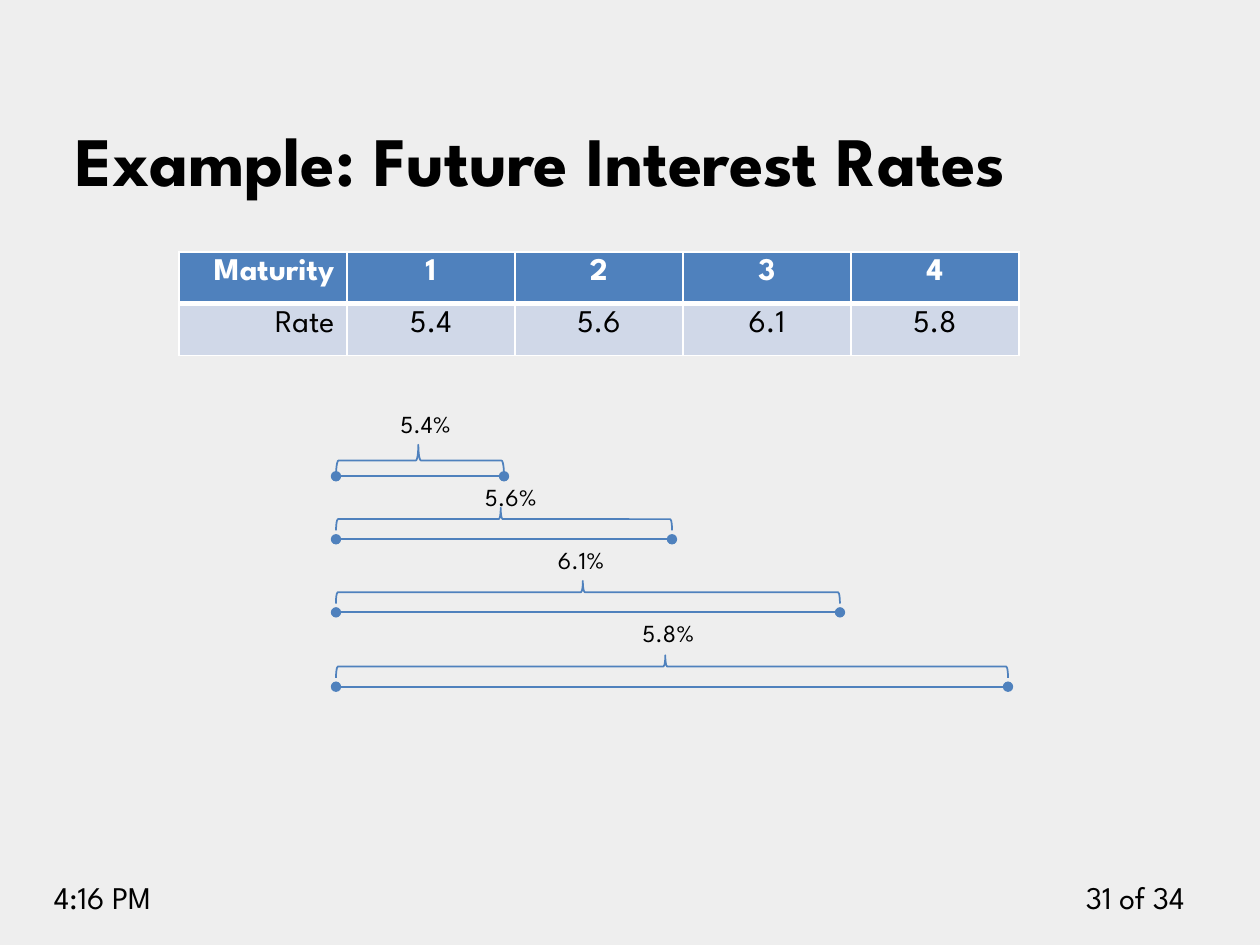
"""Build the slide on future interest rates: a rate table and a maturity timeline."""
from lxml.etree import SubElement
from pptx import Presentation
from pptx.dml.color import RGBColor
from pptx.enum.shapes import MSO_CONNECTOR, MSO_SHAPE
from pptx.enum.text import MSO_ANCHOR, MSO_AUTO_SIZE, PP_ALIGN
from pptx.oxml import parse_xml
from pptx.oxml.ns import nsdecls, qn
from pptx.util import Inches, Pt

COLORS = {"back": "EEEEEE", "ink": "000000", "accent": "4F81BD", "band": "D0D8E8", "white": "FFFFFF"}
FONT = "League Spartan"
WIDTH, HEIGHT = 10, 7.5
COLUMN = WIDTH * 2 / 15
TABLE_LEFT, TABLE_TOP, ROW = 1.42, 2, 0.41
TIMELINE_LEFT = 2 * COLUMN
RATES = ["5.4", "5.6", "6.1", "5.8"]
LINE_TOPS = [3.78, 4.28, 4.86, 5.45]
LABEL_TOPS = [3.2] + LINE_TOPS[:-1]
LABEL_LEFTS = [3.08, 3.75, 4.33, 5]
BRACES = [(3.53, 0.25)] + [(top - 0.25, 0.18) for top in LINE_TOPS[1:]]


def color(name):
    return RGBColor.from_string(COLORS[name])


def write(frame, text, size, align=PP_ALIGN.LEFT, ink="ink", bold=False):
    paragraph = frame.paragraphs[0]
    paragraph.text = text
    paragraph.alignment = align
    font = paragraph.runs[0].font
    for name, value in {"name": FONT, "size": Pt(size), "bold": bold}.items():
        setattr(font, name, value)
    font.color.rgb = color(ink)


def add_title(slide, text):
    title = slide.shapes.title
    place = {"left": 0.5, "top": 0.39, "width": 0.9 * WIDTH, "height": 1.25}
    for name, value in place.items():
        setattr(title, name, Inches(value))
    title.text_frame.auto_size = MSO_AUTO_SIZE.NONE
    title.text_frame.vertical_anchor = MSO_ANCHOR.BOTTOM
    write(title.text_frame, text, 39.6, bold=True)


def add_label(slide, text, place, size, align=PP_ALIGN.LEFT):
    frame = slide.shapes.add_textbox(*map(Inches, place)).text_frame
    frame.word_wrap = True
    write(frame, text, size, align)


def add_borders(cell, widths):
    properties = cell._tc.get_or_add_tcPr()
    for index, (side, width) in enumerate(widths.items()):
        border = parse_xml(
            f'<a:ln{side} {nsdecls("a")} w="{Pt(width)}"><a:solidFill>'
            f'<a:srgbClr val="{COLORS["white"]}"/></a:solidFill></a:ln{side}>')
        properties.insert(index, border)


def add_rate_table(slide):
    rows = [["Maturity", *map(str, range(1, len(RATES) + 1))], ["Rate", *RATES]]
    styles = [("accent", "white", True, {"L": 1, "R": 1, "T": 1, "B": 3}),
              ("band", "ink", False, {"L": 1, "R": 1, "T": 3, "B": 1})]
    count = len(rows[0])
    place = (TABLE_LEFT, TABLE_TOP, count * COLUMN, len(rows) * ROW)
    table = slide.shapes.add_table(len(rows), count, *map(Inches, place)).table
    for r, (texts, (fill, ink, bold, widths)) in enumerate(zip(rows, styles)):
        for c, text in enumerate(texts):
            cell = table.cell(r, c)
            cell.fill.solid()
            cell.fill.fore_color.rgb = color(fill)
            add_borders(cell, widths)
            align = PP_ALIGN.CENTER if c else PP_ALIGN.RIGHT
            write(cell.text_frame, text, 18, align, ink, bold)


def style_line(shape):
    shape.line.color.rgb = color("accent")
    shape.line.width = Pt(1)


def add_span(slide, length, top):
    ends = (TIMELINE_LEFT, top, TIMELINE_LEFT + length, top)
    span = slide.shapes.add_connector(MSO_CONNECTOR.STRAIGHT, *map(Inches, ends))
    style_line(span)
    outline = span.line._get_or_add_ln()
    for end in ("a:headEnd", "a:tailEnd"):
        SubElement(outline, qn(end), type="oval")
    SubElement(span._element.spPr, qn("a:effectLst"))


def add_brace(slide, length, top, depth):
    left = TIMELINE_LEFT + (length - depth) / 2
    place = (left, top + (depth - length) / 2, depth, length)
    brace = slide.shapes.add_shape(MSO_SHAPE.LEFT_BRACE, *map(Inches, place))
    brace.rotation = 270
    brace._element.spPr.xfrm.set("flipH", "1")
    brace.adjustments[0], brace.adjustments[1] = 0.08, 0.49
    brace.shadow.inherit = False
    brace.fill.background()
    style_line(brace)


def main():
    deck = Presentation()
    deck.slide_width, deck.slide_height = Inches(WIDTH), Inches(HEIGHT)
    slide = deck.slides.add_slide(deck.slide_layouts[5])
    slide.background.fill.solid()
    slide.background.fill.fore_color.rgb = color("back")
    add_label(slide, "31 of 34", (8.33, 6.92, 1.17, 0.4), 18, PP_ALIGN.RIGHT)
    add_label(slide, "4:16 PM", (0.33, 6.92, 1.58, 0.4), 18)
    add_title(slide, "Example: Future Interest Rates")
    add_rate_table(slide)
    timeline = zip(RATES, LINE_TOPS, BRACES, LABEL_LEFTS, LABEL_TOPS)
    for years, (rate, line_top, brace, left, top) in enumerate(timeline, 1):
        add_span(slide, years * COLUMN, line_top)
        add_brace(slide, years * COLUMN, *brace)
        add_label(slide, f"{rate}%", (left, top, 0.83, 0.34), 14)
    deck.save("out.pptx")


if __name__ == "__main__":
    main()
